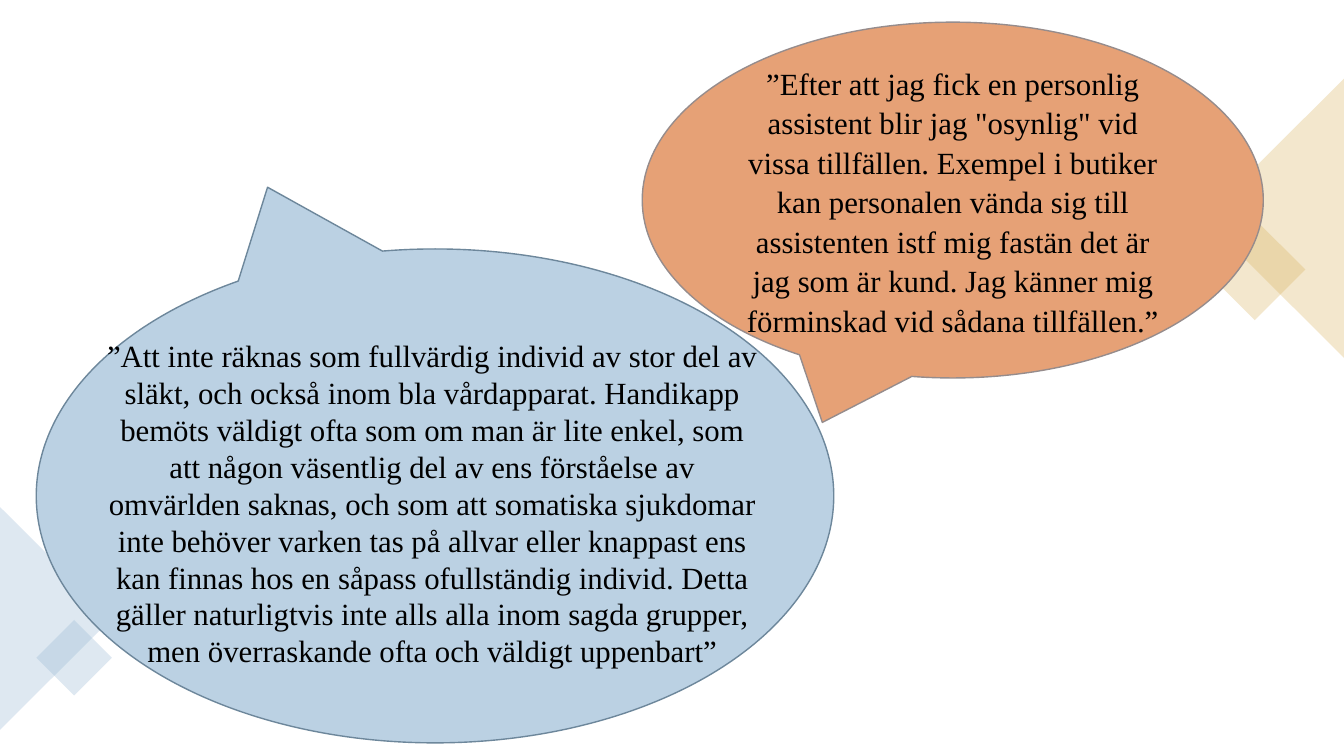
from typing import NamedTuple

from lxml import etree
from pptx import Presentation
from pptx.dml.color import RGBColor
from pptx.enum.shapes import MSO_SHAPE
from pptx.enum.text import MSO_ANCHOR, PP_ALIGN
from pptx.oxml.ns import qn
from pptx.util import Inches, Pt

RECT = MSO_SHAPE.RECTANGLE
WEDGE = MSO_SHAPE.ISOSCELES_TRIANGLE
BUBBLE = MSO_SHAPE.OVAL_CALLOUT
MIDDLE = MSO_ANCHOR.MIDDLE
CENTER = PP_ALIGN.CENTER

BLACK = RGBColor(0x00, 0x00, 0x00)
GOLD = RGBColor(0xD8, 0xB2, 0x5C)
BLUE = RGBColor(0x94, 0xB6, 0xD2)
ORANGE = RGBColor(0xE6, 0xA1, 0x76)
GREY = RGBColor(0x96, 0x8C, 0x8C)
PALE = RGBColor(0xBB, 0xD1, 0xE3)
SLATE = RGBColor(0x6D, 0x87, 0x9B)

FONT = "Times New Roman"
ALPHA = 30  # percent opacity of the edge decor


class Box(NamedTuple):
    left: float
    top: float
    width: float
    height: float


class Decor(NamedTuple):
    kind: MSO_SHAPE
    box: Box
    turn: int
    color: RGBColor


class Bubble(NamedTuple):
    box: Box
    tip: tuple[float, float]  # offset from centre, as shares of the size
    fill: RGBColor
    line: RGBColor


DECOR = [
    Decor(RECT, Box(12.09, 2.32, 0.71, 0.71), 45, GOLD),
    Decor(WEDGE, Box(11.25, 1.47, 2.77, 1.39), 270, GOLD),
    Decor(WEDGE, Box(-0.55, 5.58, 2.21, 1.11), 90, BLUE),
    Decor(RECT, Box(0.47, 6.26, 0.53, 0.53), 45, BLUE),
]
RIGHT = Bubble(Box(6.37, 0.22, 6.16, 3.53), (-0.21, 0.625), ORANGE, GREY)
LEFT = Bubble(Box(0.36, 2.47, 7.91, 4.9), (-0.21, -0.625), PALE, SLATE)
NOTE = Box(0.91, 3.29, 6.75, 3.43)

HELPER = (
    "”Efter att jag fick en personlig assistent blir jag \"osynlig\" vid vissa "
    "tillfällen. Exempel i butiker kan personalen vända sig till assistenten istf "
    "mig fastän det är jag som är kund. Jag känner mig förminskad vid sådana "
    "tillfällen.”"
)
WORTH = (
    "”Att inte räknas som fullvärdig individ av stor del av släkt, och också inom "
    "bla vårdapparat. Handikapp bemöts väldigt ofta som om man är lite enkel, som "
    "att någon väsentlig del av ens förståelse av omvärlden saknas, och som att "
    "somatiska sjukdomar inte behöver varken tas på allvar eller knappast ens kan "
    "finnas hos en såpass ofullständig individ. Detta gäller naturligtvis inte alls "
    "alla inom sagda grupper, men överraskande ofta och väldigt uppenbart”"
)


def place(box: Box) -> list[int]:
    return [Inches(side) for side in box]


def add_shape(slide, kind: MSO_SHAPE, box: Box, color: RGBColor):
    shape = slide.shapes.add_shape(kind, *place(box))
    shape.shadow.inherit = False
    shape.fill.solid()
    shape.fill.fore_color.rgb = color
    return shape


def add_decor(slide, item: Decor) -> None:
    shape = add_shape(slide, item.kind, item.box, item.color)
    shape.rotation = item.turn
    shape.line.fill.background()
    tint = shape.element.spPr.find(qn("a:solidFill")).find(qn("a:srgbClr"))
    etree.SubElement(tint, qn("a:alpha")).set("val", str(ALPHA * 1000))


def add_bubble(slide, item: Bubble):
    shape = add_shape(slide, BUBBLE, item.box, item.fill)
    shape.adjustments[0], shape.adjustments[1] = item.tip
    shape.line.color.rgb = item.line
    shape.line.width = Pt(1)
    return shape


def write(shape, text: str, *, size: float = 22, color: RGBColor = BLACK,
          align: PP_ALIGN = CENTER, anchor: MSO_ANCHOR | None = None,
          space: float | None = None) -> None:
    frame = shape.text_frame
    frame.word_wrap = True
    frame.vertical_anchor = anchor
    para = frame.paragraphs[0]
    para.alignment = align
    para.line_spacing = space
    run = para.add_run()
    run.text = text
    run.font.name = FONT
    run.font.size = Pt(size)
    run.font.color.rgb = color


def main() -> None:
    deck = Presentation()
    deck.slide_width, deck.slide_height = Inches(13.33), Inches(7.5)
    slide = deck.slides.add_slide(deck.slide_layouts[6])

    # Diamonds and wedges at the slide edges
    for item in DECOR:
        add_decor(slide, item)

    # Speech bubbles with their quotes
    write(add_bubble(slide, RIGHT), HELPER, anchor=MIDDLE, space=1.07)
    add_bubble(slide, LEFT)
    write(slide.shapes.add_textbox(*place(NOTE)), WORTH)

    deck.save("out.pptx")


if __name__ == "__main__":
    main()
